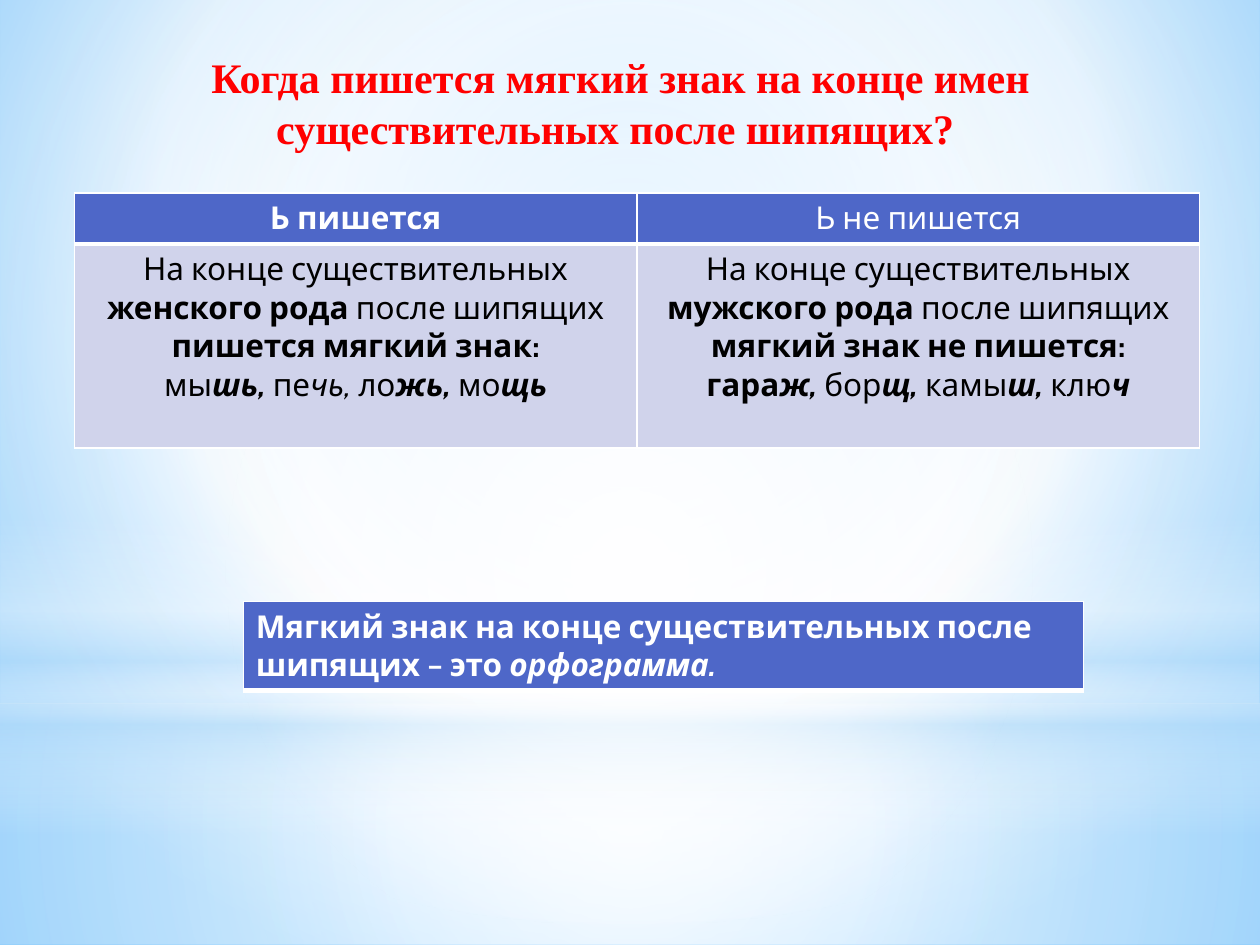
from pptx import Presentation
from pptx.dml.color import RGBColor
from pptx.enum.shapes import MSO_SHAPE
from pptx.enum.text import MSO_ANCHOR, PP_ALIGN
from pptx.oxml import parse_xml
from pptx.oxml.ns import nsdecls, qn
from pptx.util import Pt

RECTANGLE, ELLIPSE = MSO_SHAPE.RECTANGLE, MSO_SHAPE.OVAL
CENTER, LEFT, TOP = PP_ALIGN.CENTER, PP_ALIGN.LEFT, MSO_ANCHOR.TOP

RED = RGBColor(0xFF, 0x00, 0x00)
WHITE = RGBColor(0xFF, 0xFF, 0xFF)
BLACK = RGBColor(0x00, 0x00, 0x00)
HEADER_BLUE = RGBColor(0x4E, 0x67, 0xC8)
BODY_LILAC = RGBColor(0xD0, 0xD3, 0xEB)
HAZE = RGBColor(0xB4, 0xDC, 0xFA)
SKY = RGBColor(0x9E, 0xD5, 0xFF)
DEEP_SKY = RGBColor(0x5B, 0xB9, 0xFF)

CIRCLE = '<a:path path="circle"><a:fillToRect l="{}000" t="{}000" r="{}000" b="{}000"/></a:path>'
CENTERED = CIRCLE.format(50, 50, 50, 50)
DOWNWARD = '<a:lin ang="5400000" scaled="0"/>'

# Runs are (text, style), where the style holds b for bold and i for italic.
RULES = [
    [[("На конце существительных ", ""), ("женского рода ", "b"),
      ("после шипящих ", ""), ("пишется мягкий знак:", "b")],
     [("мы", ""), ("шь, ", "bi"), ("пе", ""), ("чь, ", "i"),
      ("ло", ""), ("жь, ", "bi"), ("мо", ""), ("щь", "bi")]],
    [[("На конце существительных ", ""), ("мужского рода ", "b"),
      ("после шипящих ", ""), ("мягкий знак не пишется:", "b")],
     [("гара", "b"), ("ж, ", "bi"), ("бор", ""), ("щ, ", "bi"),
      ("камы", ""), ("ш, ", "bi"), ("клю", ""), ("ч", "bi")]],
]
HEADINGS = [[[("Ь пишется", "b")]], [[("Ь не пишется", "")]]]
CONCLUSION = [[("Мягкий знак на конце существительных после шипящих – это ", "b"),
               ("орфограмма.", "bi")]]


def gradient(stops, direction):
    """Return a gradFill; stops are (position %, colour, opacity %)."""
    stop_xml = "".join(
        f'<a:gs pos="{position * 1000}"><a:srgbClr val="{color}">'
        f'<a:alpha val="{opacity * 1000}"/></a:srgbClr></a:gs>'
        for position, color, opacity in stops)
    return parse_xml(f'<a:gradFill {nsdecls("a")} rotWithShape="1">'
                     f'<a:gsLst>{stop_xml}</a:gsLst>{direction}</a:gradFill>')


def set_background(slide, fill):
    slide.background.fill.solid()
    properties = slide.element.find(".//" + qn("p:bgPr"))
    properties.replace(properties[0], fill)


def add_glow(slide, kind, top, height, stops, direction=CENTERED):
    """Add a full-width translucent band of light."""
    glow = slide.shapes.add_shape(kind, 0, Pt(top), Pt(720), Pt(height))
    glow.element.spPr.append(gradient(stops, direction))
    glow.line.fill.background()
    glow.shadow.inherit = False


def format_title(slide, text):
    title = slide.shapes.title
    slide.shapes.element.append(title.element)  # bring in front of the glows
    title.left, title.top, title.width, title.height = Pt(25.2), Pt(26), Pt(658.8), Pt(90)
    frame = title.text_frame
    frame.text = text
    frame.word_wrap = True
    frame.vertical_anchor = TOP
    paragraph = frame.paragraphs[0]
    paragraph.alignment = CENTER
    font = paragraph.font
    font.name, font.size, font.bold = "Times New Roman", Pt(24), True
    font.color.rgb = RED


def add_borders(cell, bottom_width):
    properties = cell._tc.get_or_add_tcPr()
    for side in "LRTB":
        width = bottom_width if side == "B" else 1
        properties.append(parse_xml(
            f'<a:ln{side} {nsdecls("a")} w="{Pt(width)}"><a:solidFill>'
            f'<a:srgbClr val="{WHITE}"/></a:solidFill></a:ln{side}>'))


def fill_cell(cell, paragraphs, fill, color, alignment, bottom_width):
    add_borders(cell, bottom_width)
    cell.fill.solid()
    cell.fill.fore_color.rgb = fill
    frame = cell.text_frame
    for index, runs in enumerate(paragraphs):
        paragraph = frame.add_paragraph() if index else frame.paragraphs[0]
        paragraph.alignment = alignment
        font = paragraph.font
        font.name, font.size = "Cabin", Pt(18)
        font.color.rgb = color
        for text, style in runs:
            run = paragraph.add_run()
            run.text = text
            run.font.bold = "b" in style
            run.font.italic = "i" in style


def add_rule_table(slide, left, top, width, heights, rows, alignment):
    """Add a table with a blue header row and lilac rows below it."""
    table = slide.shapes.add_table(len(rows), len(rows[0]), Pt(left), Pt(top),
                                   Pt(width), Pt(sum(heights))).table
    for row_index, (height, row) in enumerate(zip(heights, rows)):
        table.rows[row_index].height = Pt(height)
        fill, color, bottom = (BODY_LILAC, BLACK, 1) if row_index else (HEADER_BLUE, WHITE, 3)
        for column_index, paragraphs in enumerate(row):
            fill_cell(table.cell(row_index, column_index), paragraphs,
                      fill, color, alignment, bottom)


def main():
    presentation = Presentation()
    presentation.slide_width, presentation.slide_height = Pt(720), Pt(540)
    slide = presentation.slides.add_slide(presentation.slide_layouts[5])

    set_background(slide, gradient(
        [(0, SKY, 100), (60, WHITE, 100), (100, DEEP_SKY, 100)],
        CIRCLE.format(20, 10, 20, 60)))
    add_glow(slide, RECTANGLE, 401.8, 138.2,
             [(0, WHITE, 91), (37, WHITE, 76), (100, HAZE, 79)])
    add_glow(slide, RECTANGLE, 0, 401.8,
             [(0, WHITE, 89), (48, WHITE, 62), (100, HAZE, 79)])
    add_glow(slide, RECTANGLE, 296.6, 180,
             [(0, WHITE, 0), (29, WHITE, 30), (45, HAZE, 40),
              (55, WHITE, 26), (65, HAZE, 60), (100, WHITE, 0)], DOWNWARD)
    add_glow(slide, ELLIPSE, 126, 401.8, [(0, WHITE, 100), (56, WHITE, 0)])

    format_title(slide, "Когда пишется мягкий знак на конце имен "
                        "существительных после шипящих? ")
    add_rule_table(slide, 42.5, 110.2, 643, [29.2, 116.6], [HEADINGS, RULES], CENTER)
    add_rule_table(slide, 139, 343.6, 480, [50.4], [[CONCLUSION]], LEFT)
    presentation.save("out.pptx")


if __name__ == "__main__":
    main()
